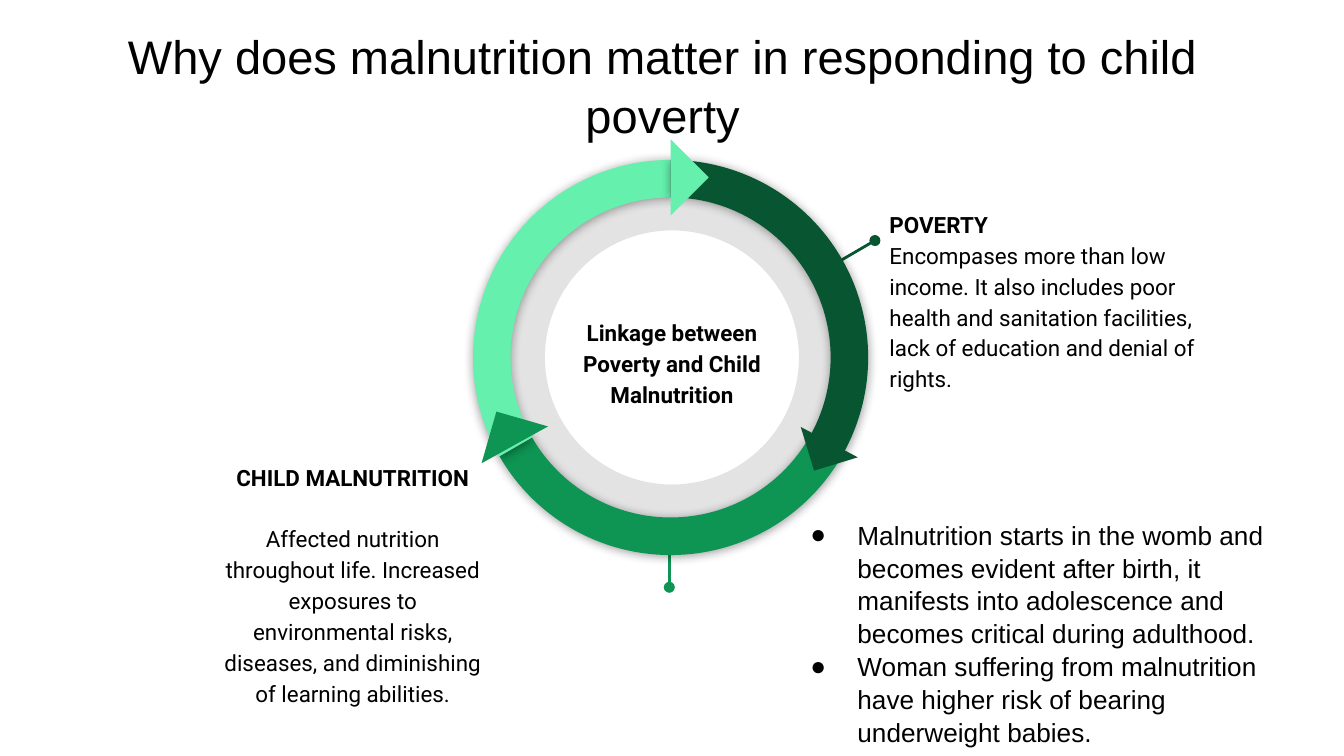
from dataclasses import dataclass

from lxml.etree import SubElement
from pptx import Presentation
from pptx.dml.color import RGBColor
from pptx.enum.shapes import MSO_CONNECTOR, MSO_SHAPE
from pptx.enum.text import MSO_ANCHOR, MSO_AUTO_SIZE, PP_ALIGN
from pptx.oxml.ns import qn
from pptx.util import Inches, Pt


@dataclass(frozen=True)
class Theme:
    ink: str = "000000"
    dark: str = "085631"
    mid: str = "0E9453"
    light: str = "65F0AD"
    sans: str = "Arial"
    label: str = "Roboto"
    head: float = 25.2
    list: float = 14
    note: float = 12


CELL = 0.1  # inches: a grid of 100 columns and 56.25 rows
COLS, ROWS = 100, 56.25


def size(n):
    return Inches(n * CELL)


def node(parent, tag, **attrs):
    """Add a drawing element below parent."""
    return SubElement(parent, qn("a:" + tag), {k: str(v) for k, v in attrs.items()})


def write(para, text, font, pts, color, bold=False, align=PP_ALIGN.LEFT,
          lead=1.0, after=0):
    """Put one formatted run into a paragraph."""
    run = para.add_run()
    run.text = text
    run.font.name, run.font.size, run.font.bold = font, Pt(pts), bold
    run.font.color.rgb = RGBColor.from_string(color)
    para.alignment, para.line_spacing = align, lead
    para.space_before, para.space_after = Pt(0), Pt(after)


class Page:
    def __init__(self, deck, theme):
        self.theme = theme
        self.slide = deck.slides.add_slide(deck.slide_layouts[1])
        self.shapes = self.slide.shapes

    def frame(self, box, spot, anchor=MSO_ANCHOR.TOP):
        """Place a text holder on the grid and return its text frame."""
        box.left, box.top, box.width, box.height = map(size, spot)
        text = box.text_frame
        text.word_wrap, text.auto_size = True, MSO_AUTO_SIZE.NONE
        text.vertical_anchor = anchor
        text.margin_left = text.margin_right = size(1)
        text.margin_top = text.margin_bottom = size(1)
        return text

    def paras(self, text, count):
        return [text.paragraphs[0]] + [text.add_paragraph() for _ in range(count - 1)]

    def title(self, spot, words):
        text = self.frame(self.shapes.title, spot)
        write(text.paragraphs[0], words, self.theme.sans, self.theme.head,
              self.theme.ink, align=PP_ALIGN.CENTER, lead=1.05)

    def bullets(self, spot, items):
        text = self.frame(self.slide.placeholders[1], spot)
        for para, item in zip(self.paras(text, len(items)), items):
            write(para, item, self.theme.sans, self.theme.list, self.theme.ink, lead=1.05)
            props = para._p.get_or_add_pPr()
            props.set("marL", str(size(5)))
            props.set("indent", str(size(-3.5)))
            node(node(props, "buClr"), "srgbClr", val=self.theme.ink)
            node(props, "buFont", typeface=self.theme.sans)
            node(props, "buChar", char="●")

    def note(self, spot, head, body="", align=PP_ALIGN.CENTER, gap=0,
             anchor=MSO_ANCHOR.TOP):
        """Bold heading with an optional plain text under it."""
        text = self.frame(self.shapes.add_textbox(0, 0, 0, 0), spot, anchor)
        parts = [part for part in (head, body) if part]
        for i, para in enumerate(self.paras(text, len(parts))):
            write(para, parts[i], self.theme.label, self.theme.note, self.theme.ink,
                  bold=i == 0, align=align, lead=1.15, after=0 if i else gap)

    def shape(self, kind, spot, color, turn=0, alpha=100):
        item = self.shapes.add_shape(kind, *map(size, spot))
        item.shadow.inherit = False
        item.fill.solid()
        item.fill.fore_color.rgb = RGBColor.from_string(color)
        item.line.fill.background()
        item.rotation = turn
        if alpha < 100:
            tint = item._element.spPr.find(qn("a:solidFill"))[0]
            node(tint, "alpha", val=alpha * 1000)
        return item

    def ring(self, spot, width, color, alpha):
        item = self.shape(MSO_SHAPE.DONUT, spot, color, alpha=alpha)
        item.adjustments[0] = width

    def arc(self, spot, start, sweep, width, color):
        """Ring segment with a soft shadow; angles run clockwise from the right."""
        item = self.shape(MSO_SHAPE.BLOCK_ARC, spot, color)
        for i, angle in enumerate((start, (start + sweep) % 360)):
            item.adjustments[i] = angle * 0.6
        item.adjustments[2] = width
        glow = node(item._element.spPr.find(qn("a:effectLst")), "outerShdw",
                    blurRad=Pt(5.6), dist=Pt(0.8), dir=90 * 60000,
                    algn="bl", rotWithShape=0)
        node(node(glow, "srgbClr", val=self.theme.ink), "alpha", val=40000)

    def tip(self, x, y, side, turn, color):
        self.shape(MSO_SHAPE.RIGHT_TRIANGLE, (x, y, side, side), color, turn)

    def stem(self, start, end, color):
        """Line with a round dot at its start."""
        item = self.shapes.add_connector(MSO_CONNECTOR.STRAIGHT, *map(size, start + end))
        item.line.color.rgb = RGBColor.from_string(color)
        item.line.width = Pt(1.5)
        node(item.line._get_or_add_ln(), "headEnd", type="oval")
        node(item._element.spPr, "effectLst")


def main():
    deck = Presentation()
    deck.slide_width, deck.slide_height = size(COLS), size(ROWS)
    theme = Theme()
    page = Page(deck, theme)

    page.title((2.7, 0.8, 93.2, 9.5),
               "Why does malnutrition matter in responding to child poverty")
    page.ring((36.1, 12.7, 27.8, 27.8), 0.16, theme.ink, alpha=11)

    page.stem((65.1, 17.9), (60.3, 20.7), theme.dark)
    page.note((65.2, 14.4, 25.6, 16.3), "POVERTY",
              "Encompases more than low income. It also includes poor health and "
              "sanitation facilities, lack of education and denial of rights.",
              align=PP_ALIGN.LEFT)
    page.stem((49.8, 43.7), (49.8, 38.7), theme.mid)
    page.note((15.5, 33.2, 21.5, 17.8), "CHILD MALNUTRITION",
              "Affected nutrition throughout life. Increased exposures to environmental "
              "risks, diseases, and diminishing of learning abilities.", gap=16.5)
    page.note((42.1, 22.5, 15.8, 8.8), "Linkage between Poverty and Child Malnutrition",
              anchor=MSO_ANCHOR.MIDDLE)

    sweep = 120
    for i, color in enumerate((theme.mid, theme.light, theme.dark)):
        page.arc((35.2, 11.9, 29.4, 29.4), 30 + i * sweep, sweep, 0.095, color)
    page.tip(47.9, 11.2, 4, 225, theme.light)
    page.tip(60, 31.2, 3.4, 343, theme.dark)
    page.tip(36.3, 31.1, 4, 106, theme.mid)

    page.bullets((57.8, 37.5, 40.2, 18.5), [
        "Malnutrition starts in the womb and becomes evident after birth, it manifests "
        "into adolescence and becomes critical during adulthood.",
        "Woman suffering from malnutrition have higher risk of bearing underweight babies.",
    ])
    deck.save("out.pptx")


if __name__ == "__main__":
    main()
